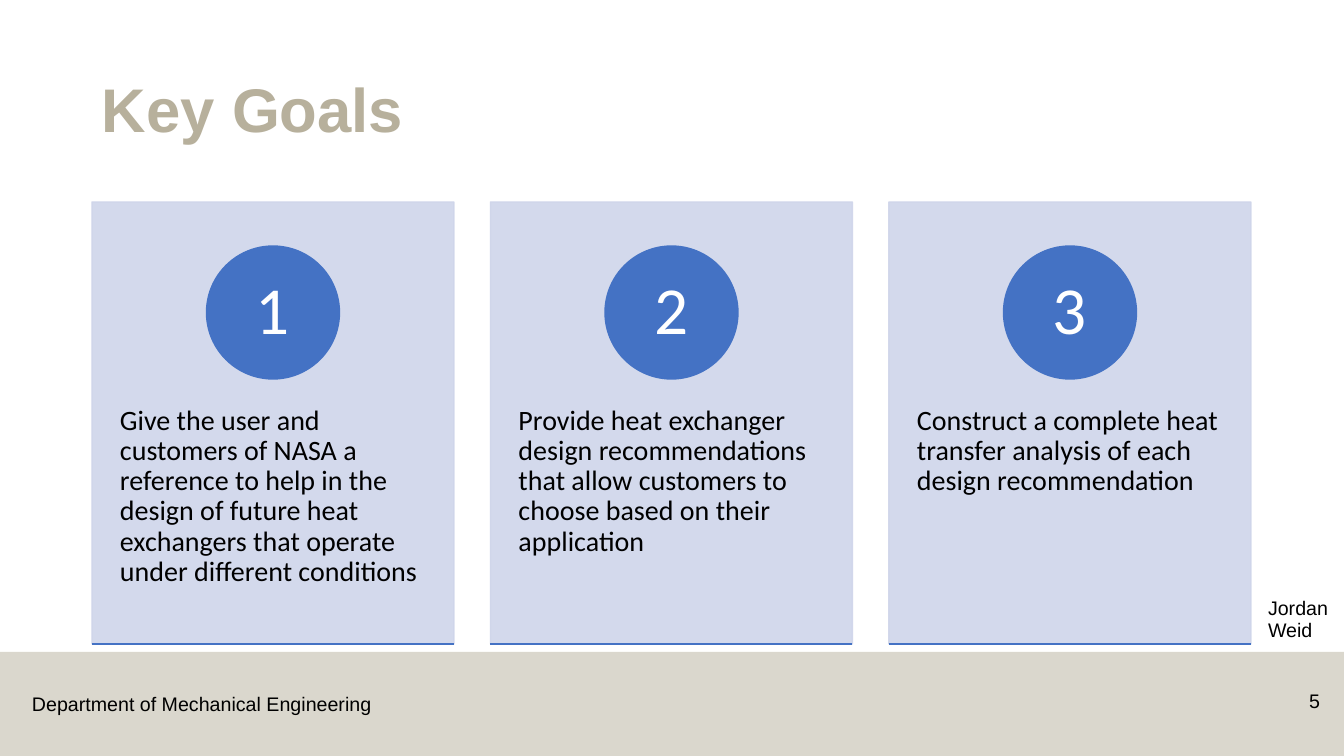
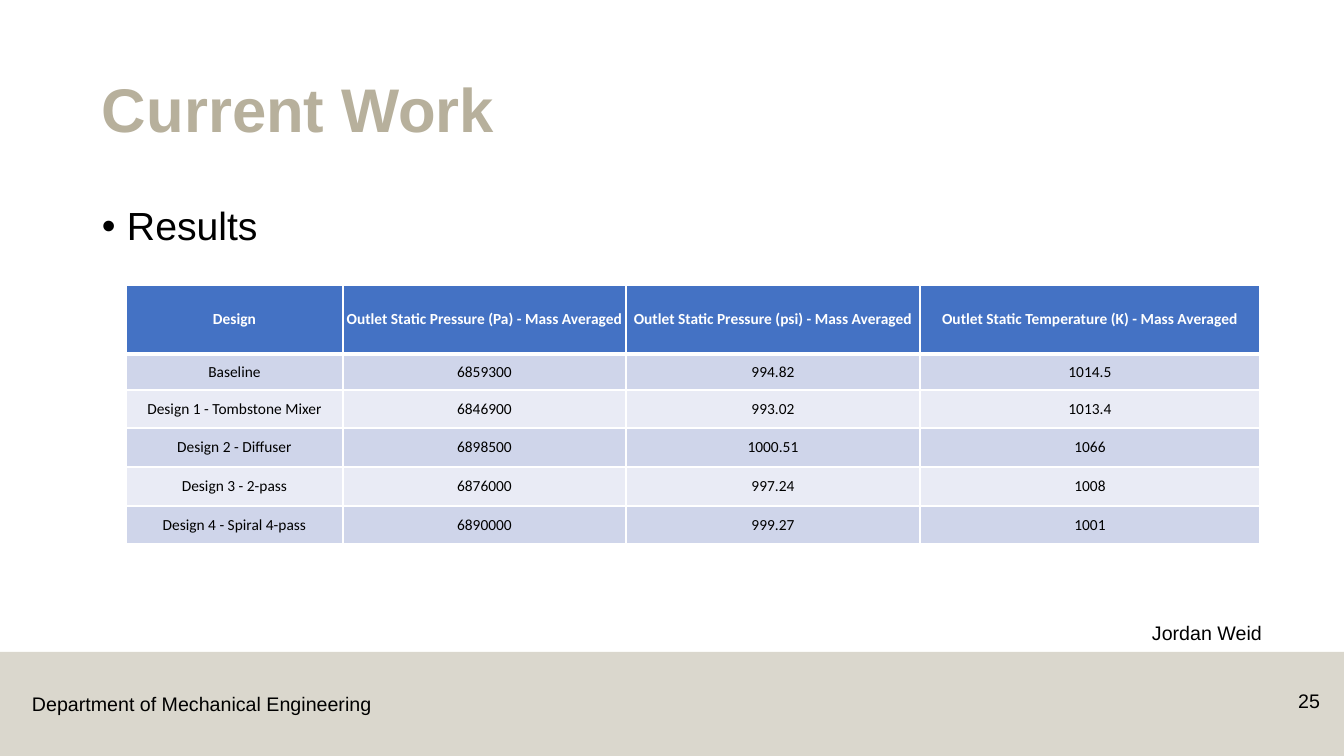
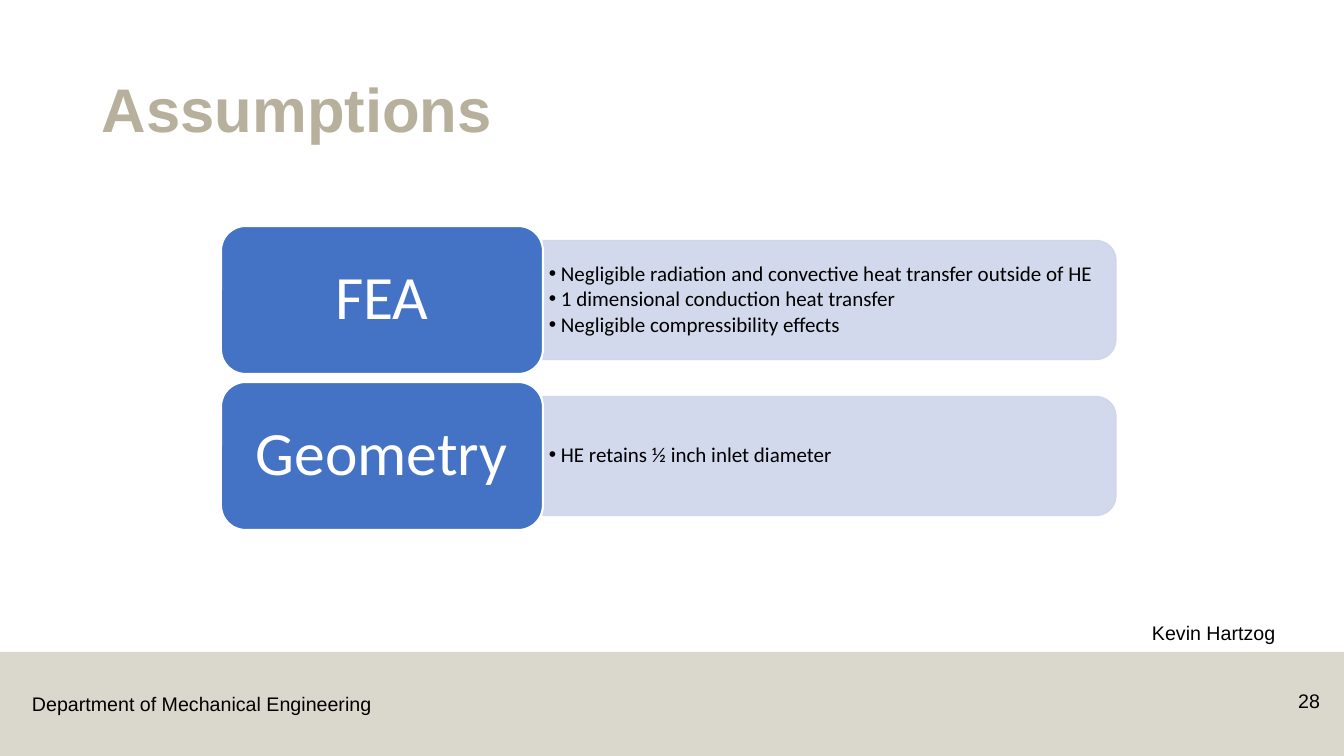
from dataclasses import dataclass

from lxml.etree import SubElement
from pptx import Presentation
from pptx.dml.color import RGBColor
from pptx.enum.shapes import MSO_CONNECTOR, MSO_SHAPE
from pptx.enum.text import MSO_ANCHOR, PP_ALIGN
from pptx.oxml.ns import qn
from pptx.util import Emu, Pt


@dataclass(frozen=True)
class TextStyle:
    font: str
    size: int
    color: str
    bold: bool = False
    line_spacing: float = 0.9
    space_after: int = 0


@dataclass(frozen=True)
class Theme:
    sand: str = "B7B09C"
    blue: str = "4472C4"
    pale_blue: str = "CFD5EA"
    paler_blue: str = "E9EBF5"
    white: str = "FFFFFF"
    title: TextStyle = TextStyle("Arial", 44, "B7B09C", bold=True)
    body: TextStyle = TextStyle("Arial", 28, "000000")
    footer: TextStyle = TextStyle("Arial", 14, "000000", line_spacing=1.0)
    author: TextStyle = TextStyle("Arial", 14, "000000")
    card: TextStyle = TextStyle("Calibri", 20, "000000")
    number: TextStyle = TextStyle("Calibri", 48, "FFFFFF")
    label: TextStyle = TextStyle("Calibri", 44, "FFFFFF")
    detail: TextStyle = TextStyle("Calibri", 15, "000000", space_after=2)
    table_head: TextStyle = TextStyle("Calibri", 11, "FFFFFF", bold=True, line_spacing=1.0)
    table_body: TextStyle = TextStyle("Calibri", 11, "000000", line_spacing=1.0)


THEME = Theme()
SLIDE_WIDTH, SLIDE_HEIGHT = 1344, 756
BAND_TOP = 652
CONTENT_LEFT, CONTENT_TOP, CONTENT_WIDTH, CONTENT_HEIGHT = 92, 202, 1159, 442
AUTHOR_PLACE = (1142, 619, 202, 34)

GOALS = [
    "Give the user and customers of NASA a reference to help in the design of "
    "future heat exchangers that operate under different conditions",
    "Provide heat exchanger design recommendations that allow customers to "
    "choose based on their application",
    "Construct a complete heat transfer analysis of each design recommendation",
]
RESULTS = [
    ["Design", "Outlet Static Pressure (Pa) - Mass Averaged",
     "Outlet Static Pressure (psi) - Mass Averaged",
     "Outlet Static Temperature (K) - Mass Averaged"],
    ["Baseline", "6859300", "994.82", "1014.5"],
    ["Design 1 - Tombstone Mixer", "6846900", "993.02", "1013.4"],
    ["Design 2 - Diffuser", "6898500", "1000.51", "1066"],
    ["Design 3 - 2-pass", "6876000", "997.24", "1008"],
    ["Design 4 - Spiral 4-pass", "6890000", "999.27", "1001"],
]
ASSUMPTIONS = [
    ("FEA", ["Negligible radiation and convective heat transfer outside of HE",
             "1 dimensional conduction heat transfer",
             "Negligible compressibility effects"]),
    ("Geometry", ["HE retains ½ inch inlet diameter"]),
]


def px(length):
    """Turn slide pixels (100.8 to the inch) into EMU."""
    return Emu(round(length * 914400 / 100.8))


def rgb(color):
    return RGBColor.from_string(color)


def write(frame, lines, style, align=PP_ALIGN.LEFT, anchor=MSO_ANCHOR.TOP,
          insets=(10, 5), wrap=True, bullet_indent=0):
    """Fill a text frame; insets are (sides, top and bottom)."""
    frame.word_wrap = wrap
    frame.vertical_anchor = anchor
    frame.margin_left = frame.margin_right = px(insets[0])
    frame.margin_top = frame.margin_bottom = px(insets[1])
    for index, line in enumerate(lines):
        para = frame.add_paragraph() if index else frame.paragraphs[0]
        para.text = line
        if bullet_indent:
            add_bullet(para, bullet_indent)
        format_paragraph(para, style, align)


def add_bullet(para, indent):
    properties = para._p.get_or_add_pPr()
    properties.set("marL", str(px(indent)))
    properties.set("indent", str(-px(indent)))
    SubElement(properties, qn("a:buFont"), typeface="Arial")
    SubElement(properties, qn("a:buChar"), char="•")


def format_paragraph(para, style, align):
    para.alignment = align
    para.line_spacing = style.line_spacing
    if style.space_after:
        para.space_after = Pt(style.space_after)
    para.font.name = style.font
    para.font.size = Pt(style.size)
    para.font.bold = style.bold
    para.font.color.rgb = rgb(style.color)


def add_text(slide, place, lines, style, **options):
    box = slide.shapes.add_textbox(*map(px, place))
    write(box.text_frame, lines, style, **options)


def add_block(slide, kind, place, fill, line=None, line_width=1, opacity=100):
    block = slide.shapes.add_shape(kind, *map(px, place))
    block.shadow.inherit = False
    block.fill.solid()
    block.fill.fore_color.rgb = rgb(fill)
    if line:
        block.line.color.rgb = rgb(line)
        block.line.width = Pt(line_width)
    else:
        block.line.fill.background()
    if opacity < 100:
        for color in block.element.spPr.iter(qn("a:srgbClr")):
            SubElement(color, qn("a:alpha"), val=str(opacity * 1000))
    return block


def add_rule(slide, left, top, width):
    rule = slide.shapes.add_connector(
        MSO_CONNECTOR.STRAIGHT, px(left), px(top), px(left + width), px(top))
    rule.line.color.rgb = rgb(THEME.blue)
    rule.line.width = Pt(1)
    SubElement(rule.element.spPr, qn("a:effectLst"))


def add_page(deck, title, number, author, author_place=AUTHOR_PLACE):
    """Add a slide with the title, band, footer and author all slides share."""
    slide = deck.slides.add_slide(deck.slide_layouts[6])
    add_block(slide, MSO_SHAPE.RECTANGLE,
              (0, BAND_TOP, SLIDE_WIDTH, SLIDE_HEIGHT - BAND_TOP), THEME.sand, opacity=50)
    add_text(slide, (22, 687, 362, 34), ["Department of Mechanical Engineering"],
             THEME.footer, wrap=False)
    add_text(slide, (CONTENT_LEFT, 40, CONTENT_WIDTH, 146), [title], THEME.title,
             anchor=MSO_ANCHOR.MIDDLE)
    add_text(slide, (1252, 684, 78, 40), [str(number)], THEME.footer, align=PP_ALIGN.RIGHT)
    add_text(slide, author_place, [author], THEME.author)
    return slide


def add_goal_card(slide, left, width, number, goal):
    diameter, circle_top, text_top = 133, 246, 406
    card = add_block(slide, MSO_SHAPE.RECTANGLE, (left, CONTENT_TOP, width, CONTENT_HEIGHT),
                     THEME.pale_blue, THEME.pale_blue, opacity=90)
    write(card.text_frame, [goal], THEME.card, insets=(28, 36))
    card.text_frame.margin_top = px(text_top - CONTENT_TOP)
    circle = add_block(slide, MSO_SHAPE.OVAL,
                       (left + (width - diameter) / 2, circle_top, diameter, diameter),
                       THEME.blue, THEME.blue)
    write(circle.text_frame, [str(number)], THEME.number, align=PP_ALIGN.CENTER,
          anchor=MSO_ANCHOR.MIDDLE, insets=(10, 1))
    add_rule(slide, left, CONTENT_TOP + CONTENT_HEIGHT, width)


def set_borders(cell, top, bottom):
    properties = cell._tc.get_or_add_tcPr()
    for side, width in (("L", 1), ("R", 1), ("T", top), ("B", bottom)):
        border = SubElement(properties, qn(f"a:ln{side}"), w=str(Pt(width)))
        fill = SubElement(border, qn("a:solidFill"))
        SubElement(fill, qn("a:srgbClr"), val=THEME.white)


def add_results_table(slide, left, top, widths, heights, rows):
    table = slide.shapes.add_table(len(rows), len(widths), px(left), px(top),
                                   px(sum(widths)), px(sum(heights))).table
    for column, width in zip(table.columns, widths):
        column.width = px(width)
    for row, height in zip(table.rows, heights):
        row.height = px(height)
    for row_index, texts in enumerate(rows):
        is_head = row_index == 0
        band = THEME.pale_blue if row_index % 2 else THEME.paler_blue
        for column_index, text in enumerate(texts):
            cell = table.cell(row_index, column_index)
            set_borders(cell, top=3 if row_index == 1 else 1, bottom=3 if is_head else 1)
            cell.fill.solid()
            cell.fill.fore_color.rgb = rgb(THEME.blue if is_head else band)
            cell.vertical_anchor = MSO_ANCHOR.MIDDLE
            cell.margin_left = cell.margin_right = cell.margin_top = cell.margin_bottom = 0
            para = cell.text_frame.paragraphs[0]
            para.text = text
            format_paragraph(para, THEME.table_head if is_head else THEME.table_body,
                             PP_ALIGN.CENTER)


def add_assumption_row(slide, top, name, details):
    label_left, label_width, label_height = 221, 322, 148
    panel_left, panel_width, panel_height = label_left + label_width, 573, 119
    middle = top + label_height / 2
    panel = add_block(slide, MSO_SHAPE.ROUND_2_SAME_RECTANGLE,
                      (panel_left + (panel_width - panel_height) / 2,
                       middle - panel_width / 2, panel_height, panel_width),
                      THEME.pale_blue, THEME.pale_blue, opacity=90)
    panel.rotation = 90
    add_text(slide, (panel_left, middle - 53, 567, 106), details, THEME.detail,
             anchor=MSO_ANCHOR.MIDDLE, insets=(6, 3), bullet_indent=12)
    label = add_block(slide, MSO_SHAPE.ROUNDED_RECTANGLE,
                      (label_left, top, label_width, label_height),
                      THEME.blue, THEME.white, line_width=1.5)
    write(label.text_frame, [name], THEME.label, align=PP_ALIGN.CENTER,
          anchor=MSO_ANCHOR.MIDDLE, insets=(18, 9))


def build_goals(deck):
    slide = add_page(deck, "Key Goals", 5, "Jordan Weid", (1258, 594, 86, 58))
    card_width = 362
    pitch = (CONTENT_WIDTH - card_width) / (len(GOALS) - 1)
    for index, goal in enumerate(GOALS):
        add_goal_card(slide, CONTENT_LEFT + index * pitch, card_width, index + 1, goal)


def build_results(deck):
    slide = add_page(deck, "Current Work", 25, "Jordan Weid")
    add_text(slide, (CONTENT_LEFT, CONTENT_TOP, CONTENT_WIDTH, CONTENT_HEIGHT), ["Results"],
             THEME.body, bullet_indent=25)
    add_results_table(slide, 126, 285, [217, 283, 294, 340], [69, 36, 38, 39, 39, 38], RESULTS)


def build_assumptions(deck):
    slide = add_page(deck, "Assumptions", 28, "Kevin Hartzog")
    for index, (name, details) in enumerate(ASSUMPTIONS):
        add_assumption_row(slide, 226 + index * 156, name, details)


def main():
    deck = Presentation()
    deck.slide_width, deck.slide_height = px(SLIDE_WIDTH), px(SLIDE_HEIGHT)
    build_goals(deck)
    build_results(deck)
    build_assumptions(deck)
    deck.save("out.pptx")


if __name__ == "__main__":
    main()
